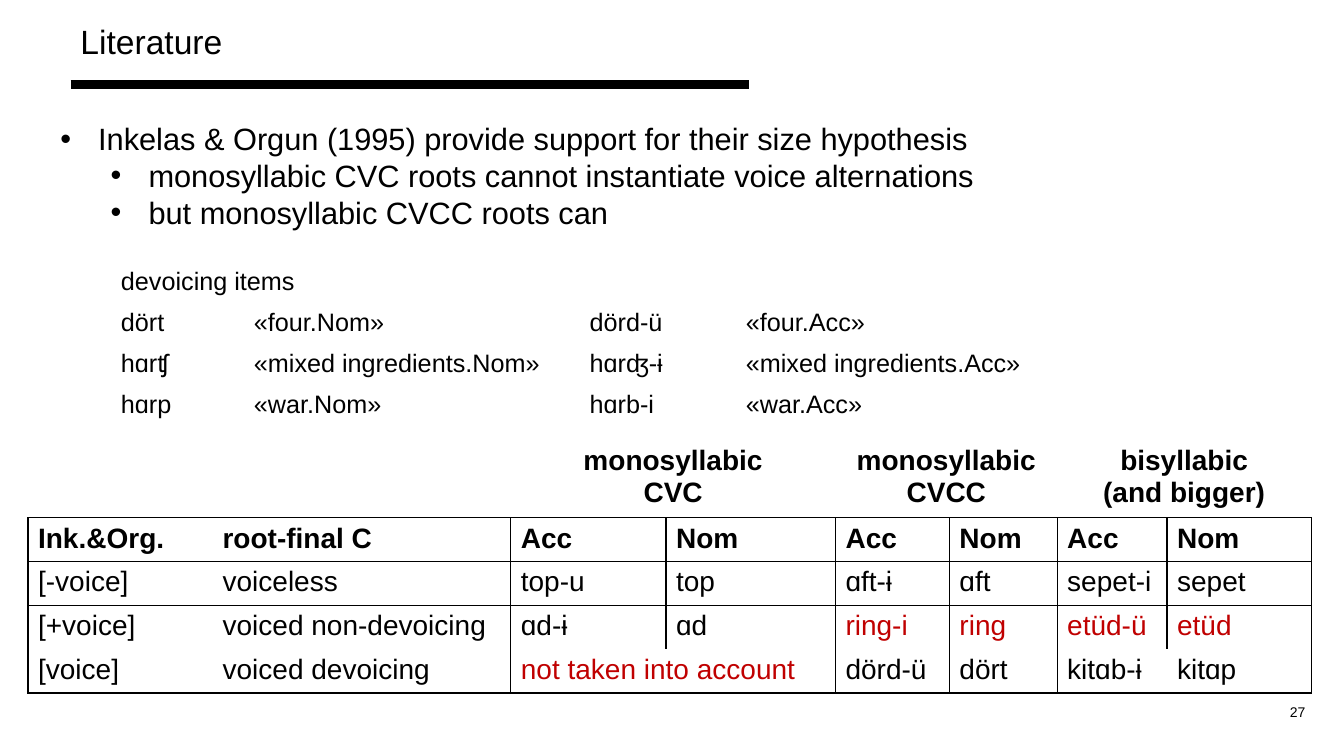
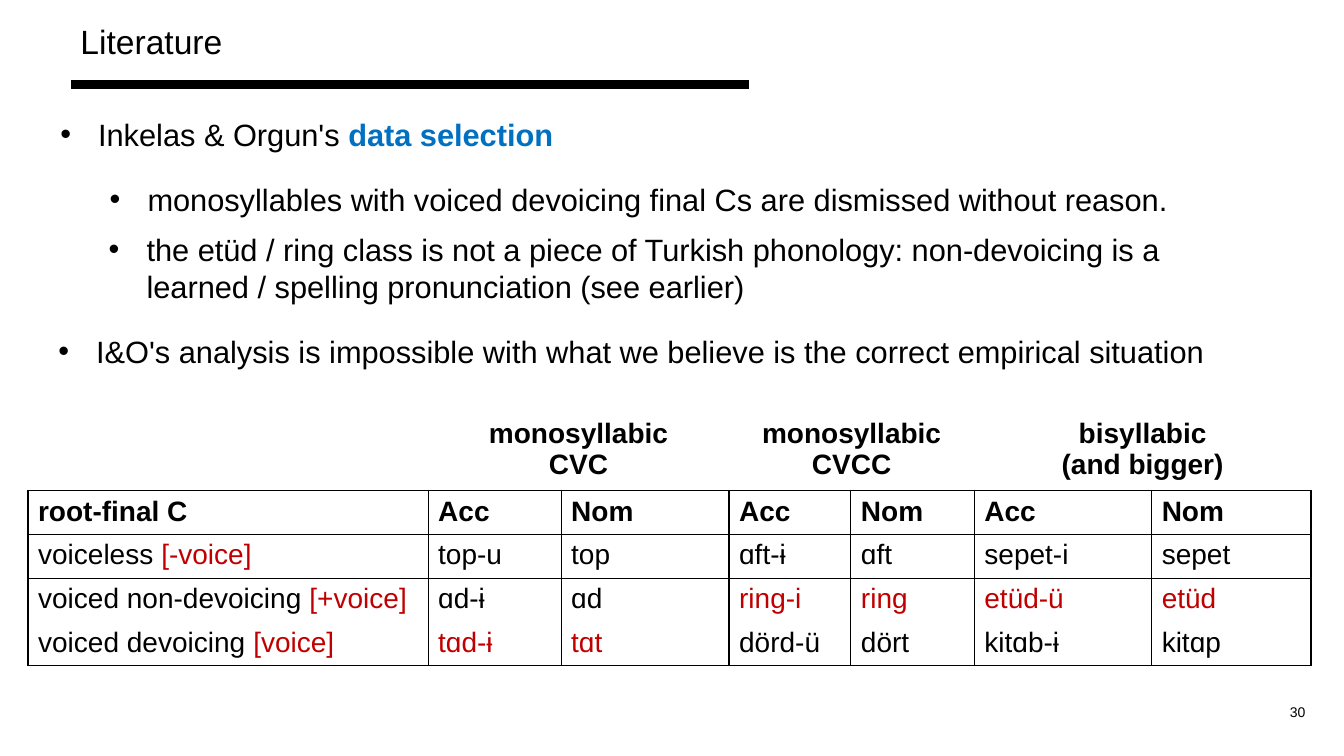
"""Build two slides on voice alternations in Turkish roots."""
from dataclasses import dataclass
from typing import Optional, Sequence

from lxml.etree import SubElement
from pptx import Presentation
from pptx.dml.color import RGBColor
from pptx.enum.shapes import MSO_CONNECTOR
from pptx.enum.text import MSO_ANCHOR, PP_ALIGN
from pptx.oxml.ns import qn
from pptx.oxml.xmlchemy import OxmlElement
from pptx.presentation import Presentation as PresentationType
from pptx.slide import Slide
from pptx.table import Table, _Cell
from pptx.text.text import TextFrame, _Paragraph
from pptx.util import Pt


@dataclass(frozen=True)
class Theme:
    """Hold the shared colours, font and type sizes."""
    font: str = "Arial"
    ink: str = "000000"
    red: str = "C00000"
    blue: str = "0070C0"
    title_size: float = 24
    body_size: float = 22
    grid_size: float = 20
    example_size: float = 18
    footer_size: float = 10
    rule_width: float = 6
    border_width: float = 1
    table_style: str = "{2D5ABB26-0587-4C30-8999-92F81FD0307C}"


THEME = Theme()


@dataclass(frozen=True)
class Run:
    """Describe a stretch of text in one format."""
    text: str
    color: str = THEME.ink
    bold: bool = False


@dataclass(frozen=True)
class Bullet:
    """Describe a bulleted paragraph."""
    runs: tuple[Run, ...]
    level: int = 0


@dataclass(frozen=True)
class Box:
    """Describe a rectangle in points."""
    left: float
    top: float
    width: float
    height: float


@dataclass(frozen=True)
class Cell:
    """Describe a table cell; a stacked cell centres one run per line."""
    runs: tuple[Run, ...] = ()
    span: int = 1
    stacked: bool = False


@dataclass(frozen=True)
class Grid:
    """Describe a table and the columns where its framed groups start."""
    left: float
    top: float
    columns: tuple[float, ...]
    row_heights: tuple[float, ...]
    rows: tuple[tuple[Cell, ...], ...]
    size: float
    group_starts: tuple[int, ...] = ()


def plain(*texts: str) -> tuple[Cell, ...]:
    """Make cells of plain text."""
    return tuple(Cell((Run(text),)) for text in texts)


def red(*texts: str) -> tuple[Cell, ...]:
    """Make cells of red text."""
    return tuple(Cell((Run(text, THEME.red),)) for text in texts)


def bold(*texts: str) -> tuple[Cell, ...]:
    """Make cells of bold text."""
    return tuple(Cell((Run(text, bold=True),)) for text in texts)


def tagged(text: str, tag: str) -> tuple[Cell, ...]:
    """Make one cell of plain text with a red feature tag."""
    return (Cell((Run(text), Run(tag, THEME.red))),)


def group_head(*lines: str) -> Cell:
    """Make a heading over a pair of columns."""
    return Cell(tuple(Run(line, bold=True) for line in lines), 2, True)


GROUP_HEADS = (group_head("monosyllabic", "CVC"), group_head("monosyllabic", "CVCC"),
               group_head("bisyllabic", "(and bigger)"))
CASE_HEADS = bold("Acc", "Nom") * len(GROUP_HEADS)
VOICELESS = plain("top-u", "top", "ɑft-ɨ", "ɑft", "sepet-i", "sepet")
NON_DEVOICING = plain("ɑd-ɨ", "ɑd") + red("ring-i", "ring", "etüd-ü", "etüd")
DEVOICING = plain("dörd-ü", "dört", "kitɑb-ɨ", "kitɑp")
ROOT_ROW_HEIGHTS = (54.8,) + (31.3,) * 4
ROOT_LEFT = 20

EXAMPLES = Grid(
    79.2, 187.9, (95, 239.8, 111.6, 222.5), (29.2,) * 4,
    ((Cell((Run("devoicing items"),), 4),),
     plain("dört", "«four.Nom»", "dörd-ü", "«four.Acc»"),
     plain("hɑrʧ", "«mixed ingredients.Nom»", "hɑrʤ-ɨ", "«mixed ingredients.Acc»"),
     plain("hɑrp", "«war.Nom»", "hɑrb-i", "«war.Acc»")),
    THEME.example_size)

PUBLISHED_ROOTS = Grid(
    ROOT_LEFT, 314.6, (131.8, 213.1, 110.9, 121, 81.4, 77, 78.5, 103), ROOT_ROW_HEIGHTS,
    ((Cell(), Cell()) + GROUP_HEADS,
     bold("Ink.&Org.", "root-final C") + CASE_HEADS,
     plain("[-voice]", "voiceless") + VOICELESS,
     plain("[+voice]", "voiced non-devoicing") + NON_DEVOICING,
     plain("[voice]", "voiced devoicing")
     + (Cell((Run("not taken into account", THEME.red),), 2),) + DEVOICING),
    THEME.grid_size, (0, 2, 4, 6))

COMPLETED_ROOTS = Grid(
    ROOT_LEFT, 295.2, (285.8, 95, 120, 87, 88.2, 126.7, 113.8), ROOT_ROW_HEIGHTS,
    ((Cell(),) + GROUP_HEADS,
     bold("root-final C") + CASE_HEADS,
     tagged("voiceless ", "[-voice]") + VOICELESS,
     tagged("voiced non-devoicing ", "[+voice]") + NON_DEVOICING,
     tagged("voiced devoicing ", "[voice]") + red("tɑd-ɨ", "tɑt") + DEVOICING),
    THEME.grid_size, (0, 1, 3, 5))


def add_runs(paragraph: _Paragraph, runs: Sequence[Run], size: float) -> None:
    """Add formatted runs to a paragraph."""
    for item in runs:
        run = paragraph.add_run()
        run.text = item.text
        run.font.name = THEME.font
        run.font.size = Pt(size)
        run.font.bold = item.bold
        run.font.color.rgb = RGBColor.from_string(item.color)


def next_paragraph(frame: TextFrame, index: int) -> _Paragraph:
    """Return the first paragraph, or a new one after it."""
    return frame.paragraphs[0] if index == 0 else frame.add_paragraph()


def add_text_frame(slide: Slide, box: Box) -> TextFrame:
    """Add a wrapping text box and return its frame."""
    frame = slide.shapes.add_textbox(
        Pt(box.left), Pt(box.top), Pt(box.width), Pt(box.height)).text_frame
    frame.word_wrap = True
    return frame


def add_bullets(slide: Slide, box: Box, bullets: Sequence[Bullet]) -> None:
    """Add a text box of bulleted paragraphs."""
    frame = add_text_frame(slide, box)
    for index, bullet in enumerate(bullets):
        paragraph = next_paragraph(frame, index)
        paragraph.level = bullet.level
        add_runs(paragraph, bullet.runs, THEME.body_size)
        properties = paragraph._p.get_or_add_pPr()
        properties.set("marL", str(Pt(27 + 36 * bullet.level)))
        properties.set("indent", str(Pt(-27)))
        SubElement(properties, qn("a:buFont")).set("typeface", THEME.font)
        SubElement(properties, qn("a:buChar")).set("char", "•")


def draw_borders(cell: _Cell, sides: str) -> None:
    """Draw thin lines on the named sides of a cell."""
    properties = cell._tc.get_or_add_tcPr()
    for index, side in enumerate(side for side in "LRTB" if side in sides):
        line = OxmlElement(f"a:ln{side}")
        line.set("w", str(Pt(THEME.border_width)))
        fill = SubElement(line, qn("a:solidFill"))
        SubElement(fill, qn("a:srgbClr")).set("val", THEME.ink)
        properties.insert(index, line)


def border_sides(grid: Grid, row: int, column: int) -> str:
    """Work out which sides of a cell carry a line."""
    if not grid.group_starts or row == 0:
        return ""
    ends = grid.group_starts[1:] + (len(grid.columns),)
    rules = (("L", column in grid.group_starts), ("R", column + 1 in ends),
             ("T", row in (1, 2)), ("B", row in (1, len(grid.rows) - 1)))
    return "".join(side for side, drawn in rules if drawn)


def fill_cell(target: _Cell, cell: Cell, size: float) -> None:
    """Write the content of a cell."""
    lines = [(run,) for run in cell.runs] if cell.stacked else [cell.runs]
    for index, runs in enumerate(lines):
        paragraph = next_paragraph(target.text_frame, index)
        paragraph.alignment = PP_ALIGN.CENTER if cell.stacked else PP_ALIGN.LEFT
        add_runs(paragraph, runs, size)


def add_grid(slide: Slide, grid: Grid) -> None:
    """Add a table with its merged cells and borders."""
    table: Table = slide.shapes.add_table(
        len(grid.rows), len(grid.columns), Pt(grid.left), Pt(grid.top),
        Pt(sum(grid.columns)), Pt(sum(grid.row_heights))).table
    table.first_row = table.horz_banding = False
    table._tbl.tblPr.find(qn("a:tableStyleId")).text = THEME.table_style
    for column, width in zip(table.columns, grid.columns):
        column.width = Pt(width)
    for row_index, cells in enumerate(grid.rows):
        table.rows[row_index].height = Pt(grid.row_heights[row_index])
        column_index = 0
        for cell in cells:
            target = table.cell(row_index, column_index)
            if cell.span > 1:
                target.merge(table.cell(row_index, column_index + cell.span - 1))
            fill_cell(target, cell, grid.size)
            column_index += cell.span
        for column_index in range(len(grid.columns)):
            target = table.cell(row_index, column_index)
            target.fill.background()
            sides = border_sides(grid, row_index, column_index)
            if target.is_merge_origin and sides:
                sides += border_sides(grid, row_index, column_index + target.span_width - 1)
            draw_borders(target, sides)


def add_slide(presentation: PresentationType, number: str) -> Slide:
    """Add a slide with the shared title, rule and page number."""
    slide = presentation.slides.add_slide(presentation.slide_layouts[6])
    rule = slide.shapes.add_connector(
        MSO_CONNECTOR.STRAIGHT, Pt(50.4), Pt(60.5), Pt(535), Pt(60.5))
    rule.line.color.rgb = RGBColor.from_string(THEME.ink)
    rule.line.width = Pt(THEME.rule_width)
    SubElement(rule._element.spPr, qn("a:effectLst"))
    title = add_text_frame(slide, Box(50.4, 7.9, 640.8, 36))
    title.margin_top = Pt(6.9)
    add_runs(title.paragraphs[0], (Run("Literature"),), THEME.title_size)
    footer = add_text_frame(slide, Box(824.4, 496.8, 115.2, 21.6))
    footer.vertical_anchor = MSO_ANCHOR.BOTTOM
    footer.paragraphs[0].alignment = PP_ALIGN.RIGHT
    add_runs(footer.paragraphs[0], (Run(number),), THEME.footer_size)
    return slide


def build_support_slide(presentation: PresentationType) -> None:
    """Build the slide on the size hypothesis."""
    slide = add_slide(presentation, "27")
    add_bullets(slide, Box(36, 82.1, 908.6, 87.1), (
        Bullet((Run("Inkelas & Orgun (1995) provide support for their size hypothesis"),)),
        Bullet((Run("monosyllabic CVC roots cannot instantiate voice alternations"),), 1),
        Bullet((Run("but monosyllabic CVCC roots can"),), 1)))
    add_grid(slide, EXAMPLES)
    add_grid(slide, PUBLISHED_ROOTS)


def build_selection_slide(presentation: PresentationType) -> None:
    """Build the slide on data selection."""
    slide = add_slide(presentation, "30")
    statements = (
        (Box(36, 79.2, 808.6, 33.8), Bullet(
            (Run("Inkelas & Orgun's "), Run("data selection", THEME.blue, True)))),
        (Box(35.3, 125.3, 808.6, 33.8), Bullet(
            (Run("monosyllables with voiced devoicing final Cs are dismissed "
                 "without reason."),), 1)),
        (Box(34.6, 161.3, 808.6, 60.5), Bullet(
            (Run("the etüd / ring class is not a piece of Turkish phonology: non-devoicing "
                 "is a learned / spelling pronunciation (see earlier)"),), 1)),
        (Box(34.6, 234, 858.2, 33.8), Bullet(
            (Run("I&O's analysis is impossible with what we believe is the correct "
                 "empirical situation"),))))
    for box, bullet in statements:
        add_bullets(slide, box, (bullet,))
    add_grid(slide, COMPLETED_ROOTS)


def main() -> None:
    """Build and save the presentation."""
    presentation = Presentation()
    presentation.slide_width, presentation.slide_height = Pt(960), Pt(540)
    build_support_slide(presentation)
    build_selection_slide(presentation)
    presentation.save("out.pptx")


if __name__ == "__main__":
    main()
